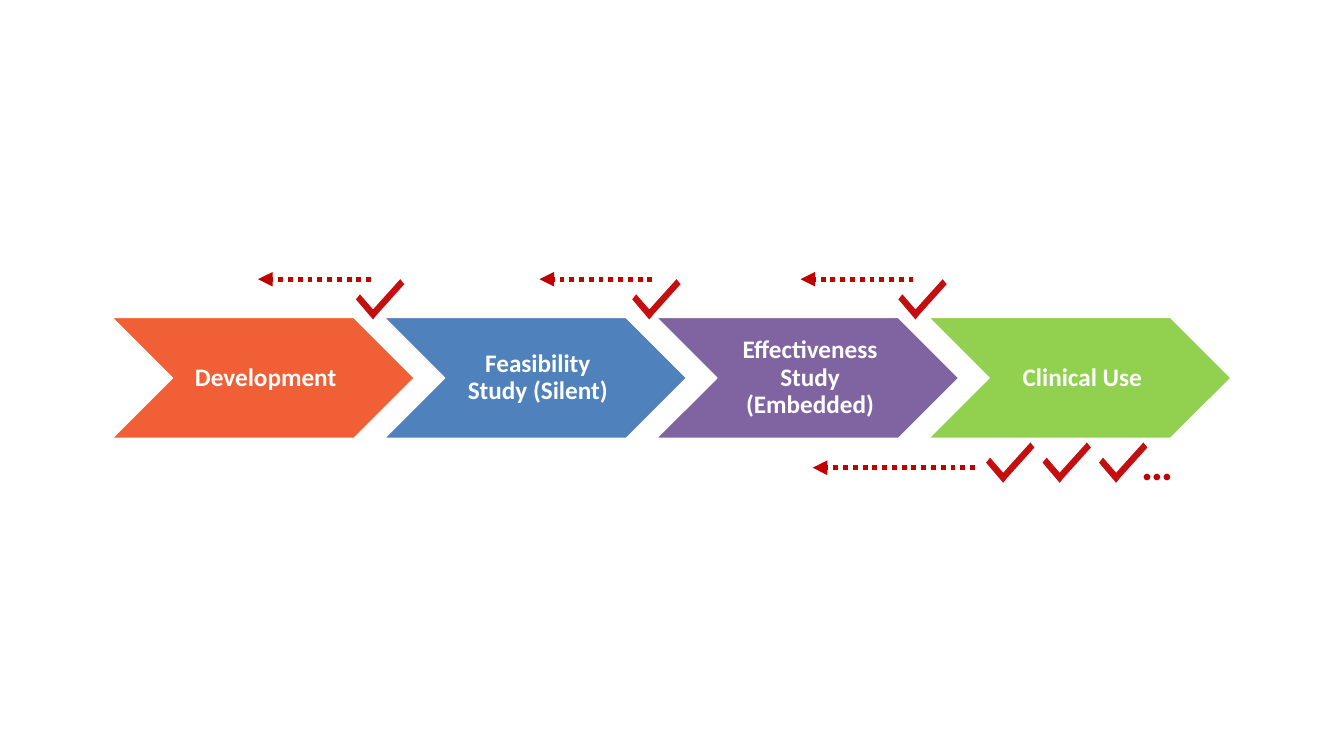
import pptx
import pptx.util
import pptx.dml.color
import pptx.enum.dml
import pptx.enum.shapes
import pptx.enum.text
import pptx.oxml
import pptx.oxml.ns
import lxml.etree

Inches = pptx.util.Inches
Pt = pptx.util.Pt
FONT = "Calibri"
COLORS = {
    "development": "F05F36",
    "feasibility": "4F81BD",
    "effectiveness": "8064A2",
    "clinical": "92D050",
    "feedback": "C00000",
    "white": "FFFFFF",
}
STAGES = [
    ("Development", "development"),
    ("Feasibility Study (Silent)", "feasibility"),
    ("Effectiveness Study (Embedded)", "effectiveness"),
    ("Clinical Use", "clinical"),
]
STAGE_WIDTH = 3
STAGE_STEP = 2.7
CHECK_OUTLINE = [(0.44, 0), (0.17, 0.3), (0.04, 0.15), (0, 0.2),
                 (0.17, 0.4), (0.21, 0.35), (0.48, 0.05)]


def color(name):
    return pptx.dml.color.RGBColor.from_string(COLORS[name])


def add_child(parent, tag, **attributes):
    child = lxml.etree.SubElement(parent, pptx.oxml.ns.qn(tag))
    for key, value in attributes.items():
        child.set(key, value)
    return child


def style_text(frame, size, color_name):
    for para in frame.paragraphs:
        for span in para.runs:
            span.font.name = FONT
            span.font.size = Pt(size)
            span.font.bold = True
            span.font.color.rgb = color(color_name)


def add_stage(page, left, top, width, height, label, fill_name):
    stage = page.shapes.add_shape(
        pptx.enum.shapes.MSO_SHAPE.CHEVRON,
        Inches(left), Inches(top), Inches(width), Inches(height))
    stage.shadow.inherit = False
    stage.fill.solid()
    stage.fill.fore_color.rgb = color(fill_name)
    stage.line.color.rgb = color("white")
    stage.line.width = Pt(1)
    frame = stage.text_frame
    frame.word_wrap = True
    frame.vertical_anchor = pptx.enum.text.MSO_ANCHOR.MIDDLE
    frame.margin_left = Inches(0.08)
    frame.margin_top = frame.margin_right = frame.margin_bottom = Inches(0.03)
    frame.text = label
    frame.paragraphs[0].alignment = pptx.enum.text.PP_ALIGN.CENTER
    frame.paragraphs[0].line_spacing = 0.9
    style_text(frame, 18, "white")


def add_check(page, left, top):
    points = [(Inches(left + x), Inches(top + y)) for x, y in CHECK_OUTLINE]
    builder = page.shapes.build_freeform(*points[0])
    builder.add_line_segments(points[1:], close=True)
    check = builder.convert_to_shape()
    check.shadow.inherit = False
    check.fill.solid()
    check.fill.fore_color.rgb = color("feedback")
    check.line.fill.background()
    tint = check.fill._xPr.find(".//" + pptx.oxml.ns.qn("a:srgbClr"))
    add_child(tint, "a:alpha", val="94000")


def add_return_arrow(page, start, end, height):
    arrow = page.shapes.add_connector(
        pptx.enum.shapes.MSO_CONNECTOR.STRAIGHT,
        Inches(start), Inches(height), Inches(end), Inches(height))
    arrow.line.color.rgb = color("feedback")
    arrow.line.width = Pt(3.5)
    arrow.line.dash_style = pptx.enum.dml.MSO_LINE.ROUND_DOT
    add_child(arrow.line._get_or_add_ln(), "a:tailEnd", type="triangle")
    add_child(arrow._element.spPr, "a:effectLst")


def add_stages(page, left, top, height):
    for index, (label, fill_name) in enumerate(STAGES):
        add_stage(page, left + index * STAGE_STEP, top,
                  STAGE_WIDTH, height, label, fill_name)


def add_gates(page, left, top):
    for check_offset, arrow_offset in [(2.42, 2.57), (5.16, 5.36), (7.8, 7.95)]:
        add_check(page, left + check_offset, top)
        add_return_arrow(page, left + arrow_offset, left + arrow_offset - 1.12, top)


def add_monitoring(page, left, top):
    for index in range(3):
        add_check(page, left + 1.72 + index * 0.56, top)
    box = page.shapes.add_textbox(
        Inches(left + 3.16), Inches(top - 0.12), Inches(0.5), Inches(0.64))
    box.text_frame.word_wrap = True
    box.text_frame.text = "…"
    style_text(box.text_frame, 32, "feedback")
    add_return_arrow(page, left + 1.61, left, top + 0.25)


def main():
    deck = pptx.Presentation()
    deck.slide_width = Inches(13.33)
    deck.slide_height = Inches(7.5)
    page = deck.slides.add_slide(deck.slide_layouts[6])
    add_stages(page, 1.11, 3.15, 1.2)
    add_gates(page, 1.11, 2.77)
    add_monitoring(page, 8.06, 4.39)
    deck.save("out.pptx")


if __name__ == "__main__":
    main()
